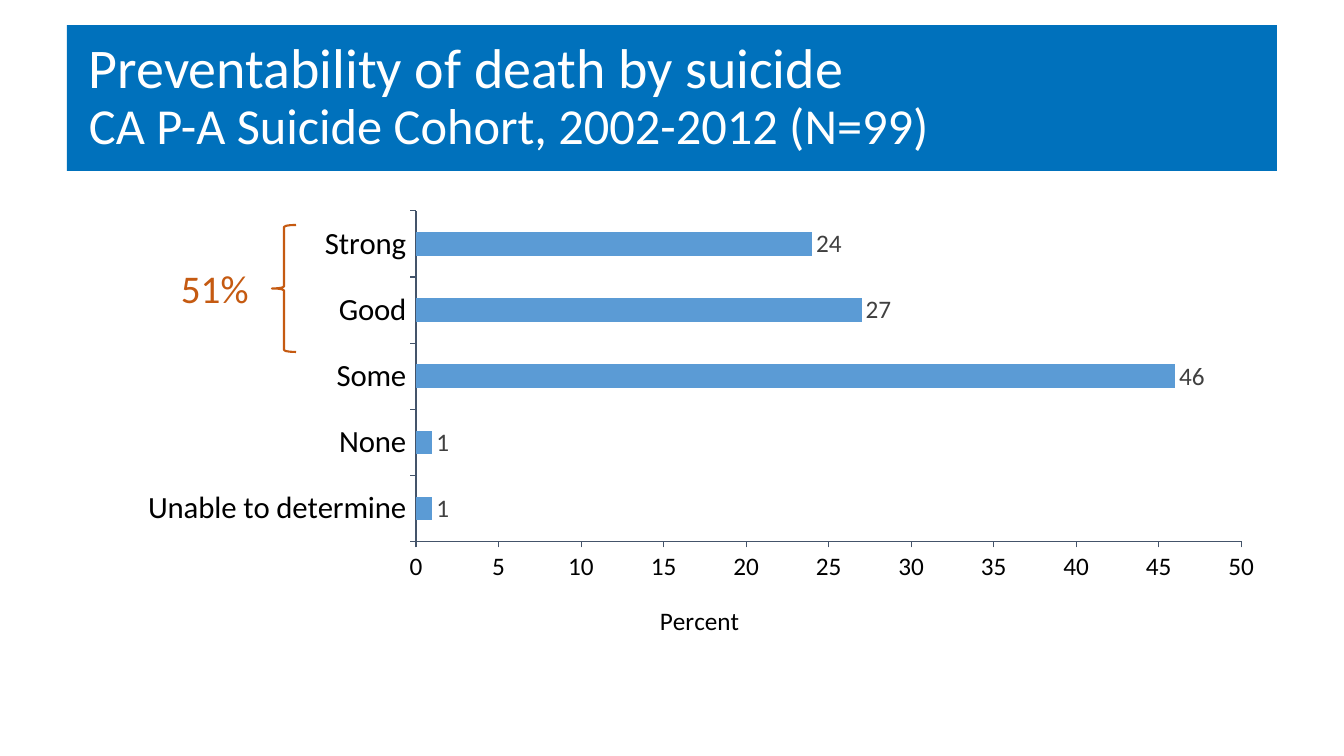
from lxml import etree
from pptx import Presentation
from pptx.chart.data import CategoryChartData
from pptx.dml.color import RGBColor
from pptx.enum.chart import XL_CHART_TYPE as ChartType
from pptx.enum.chart import XL_LABEL_POSITION as LabelPosition
from pptx.enum.chart import XL_TICK_MARK as TickMark
from pptx.enum.shapes import MSO_SHAPE as Shape
from pptx.enum.text import MSO_ANCHOR as Anchor
from pptx.enum.text import PP_ALIGN as Align
from pptx.oxml.ns import qn
from pptx.util import Emu, Pt

EMU_PER_PX = 914400 / 100.8
FONT = "Calibri"
COLORS = {
    "banner": "0071BC",
    "white": "FFFFFF",
    "black": "000000",
    "bar": "5B9BD5",
    "axis": "44546A",
    "value": "404040",
    "accent": "C55A11",
}
CHART_BOX = (126, 202, 1151, 451)
PREVENTABILITY = {
    "Unable to determine": 1,
    "None": 1,
    "Some": 46,
    "Good": 27,
    "Strong": 24,
}


def px(length):
    return Emu(round(length * EMU_PER_PX))


def color(name):
    return RGBColor.from_string(COLORS[name])


def style_font(font, size, color_name):
    font.name = FONT
    font.size = Pt(size)
    font.bold = False
    font.color.rgb = color(color_name)


def add_run(para, text, size, color_name):
    span = para.add_run()
    span.text = text
    style_font(span.font, size, color_name)


def add_banner(slide, box, heading, subheading):
    banner = slide.shapes.add_shape(Shape.RECTANGLE, *map(px, box))
    banner.shadow.inherit = False
    banner.fill.solid()
    banner.fill.fore_color.rgb = color("banner")
    banner.line.fill.background()
    frame = banner.text_frame
    frame.word_wrap = True
    frame.vertical_anchor = Anchor.MIDDLE
    frame.margin_left = px(22)
    para = frame.paragraphs[0]
    para.alignment = Align.LEFT
    para.line_spacing = 0.9
    add_run(para, heading, 40, "white")
    para.add_line_break()
    add_run(para, subheading, 36, "white")


def set_layout(parent, position, **settings):
    """Place a chart part by hand, as fractions of the chart frame."""
    for old_layout in parent.findall(qn("c:layout")):
        parent.remove(old_layout)
    layout = etree.Element(qn("c:layout"))
    manual = etree.SubElement(layout, qn("c:manualLayout"))
    for tag, value in settings.items():
        etree.SubElement(manual, qn(f"c:{tag}")).set("val", str(value))
    parent.insert(position, layout)


def style_axis(axis, size):
    axis.has_major_gridlines = False
    axis.major_tick_mark = TickMark.OUTSIDE
    axis.minor_tick_mark = TickMark.NONE
    axis.format.line.color.rgb = color("axis")
    axis.format.line.width = Pt(0.75)
    style_font(axis.tick_labels.font, size, "black")


def style_value_axis(axis):
    style_axis(axis, 18)
    axis.minimum_scale, axis.maximum_scale, axis.major_unit = 0, 50, 5
    axis.tick_labels.number_format = "0"
    axis.tick_labels.number_format_is_linked = False
    title = axis.axis_title
    add_run(title.text_frame.paragraphs[0], "Percent", 18, "black")
    set_layout(title._element, 1, xMode="edge", yMode="edge", x=0.46, y=0.88)


def add_bar_chart(slide, box, values):
    data = CategoryChartData(number_format="0")
    data.categories = list(values)
    data.add_series("Series 1", list(values.values()))
    frame = slide.shapes.add_chart(ChartType.BAR_CLUSTERED, *map(px, box), data)
    chart = frame.chart
    chart.has_legend = False
    chart.has_title = False
    style_font(chart.font, 10, "black")
    style_axis(chart.category_axis, 22)
    style_value_axis(chart.value_axis)

    plot = chart.plots[0]
    plot.gap_width = 182
    plot.vary_by_categories = False
    series = plot.series[0]
    series.format.fill.solid()
    series.format.fill.fore_color.rgb = color("bar")
    labels = series.data_labels
    labels.show_value = True
    labels.position = LabelPosition.OUTSIDE_END
    labels.number_format = "0"
    labels.number_format_is_linked = False
    style_font(labels.font, 18, "value")

    plot_area = chart._chartSpace.find(f".//{qn('c:plotArea')}")
    set_layout(plot_area, 0, layoutTarget="inner", xMode="edge", yMode="edge",
               x=0.252, y=0.02, w=0.717, h=0.733)


def add_brace(slide, box):
    brace = slide.shapes.add_shape(Shape.LEFT_BRACE, *map(px, box))
    brace.shadow.inherit = False
    brace.fill.background()
    brace.line.color.rgb = color("accent")
    brace.line.width = Pt(1.5)


def add_label(slide, box, text):
    label = slide.shapes.add_textbox(*map(px, box))
    label.text_frame.word_wrap = True
    add_run(label.text_frame.paragraphs[0], text, 28, "accent")


def main():
    deck = Presentation()
    deck.slide_width, deck.slide_height = px(1344), px(756)
    page = deck.slides.add_slide(deck.slide_layouts[6])
    add_banner(page, (67, 25, 1210, 146), "Preventability of death by suicide",
               "CA P-A Suicide Cohort, 2002-2012 (N=99)")
    add_bar_chart(page, CHART_BOX, PREVENTABILITY)
    add_brace(page, (272, 225, 24, 127))
    add_label(page, (171, 259, 101, 57), "51%")
    deck.save("out.pptx")


if __name__ == "__main__":
    main()
